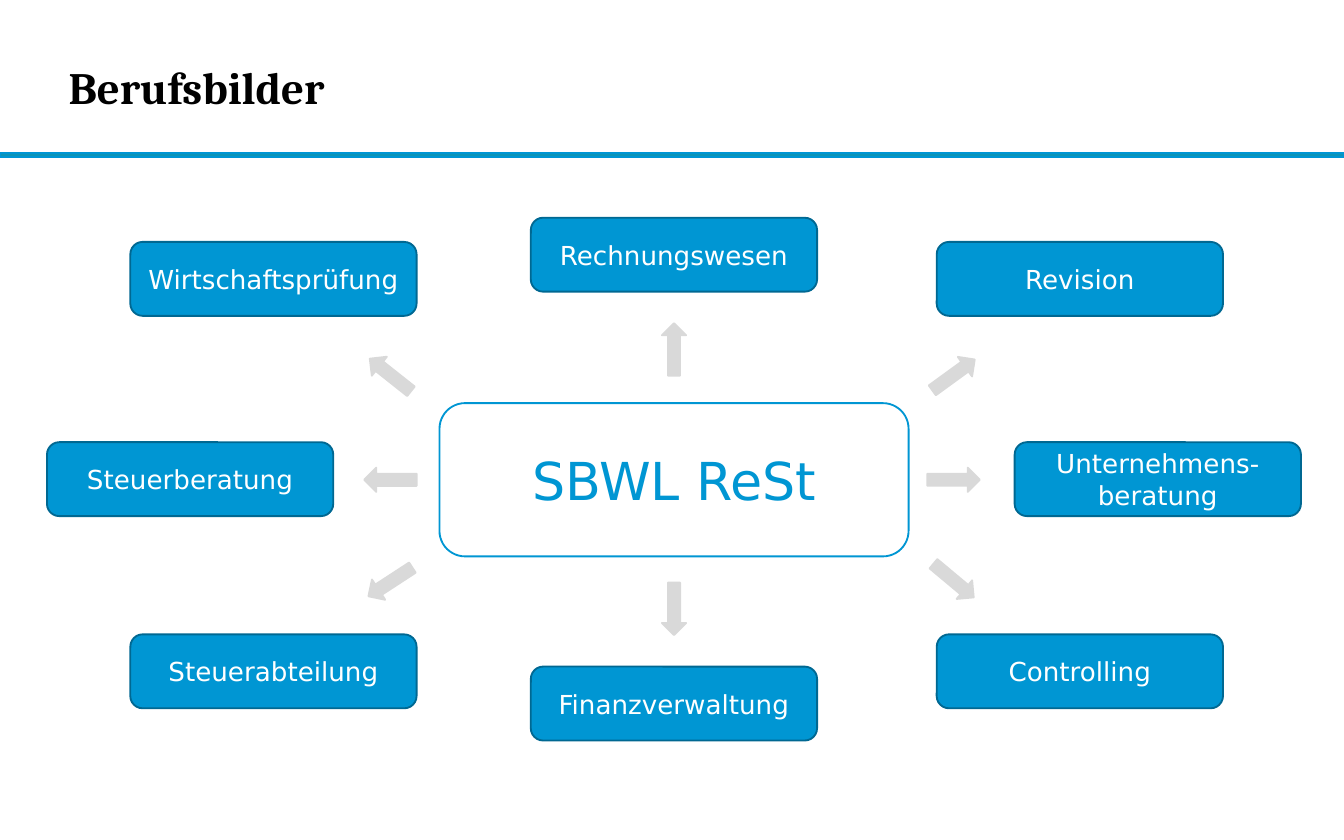
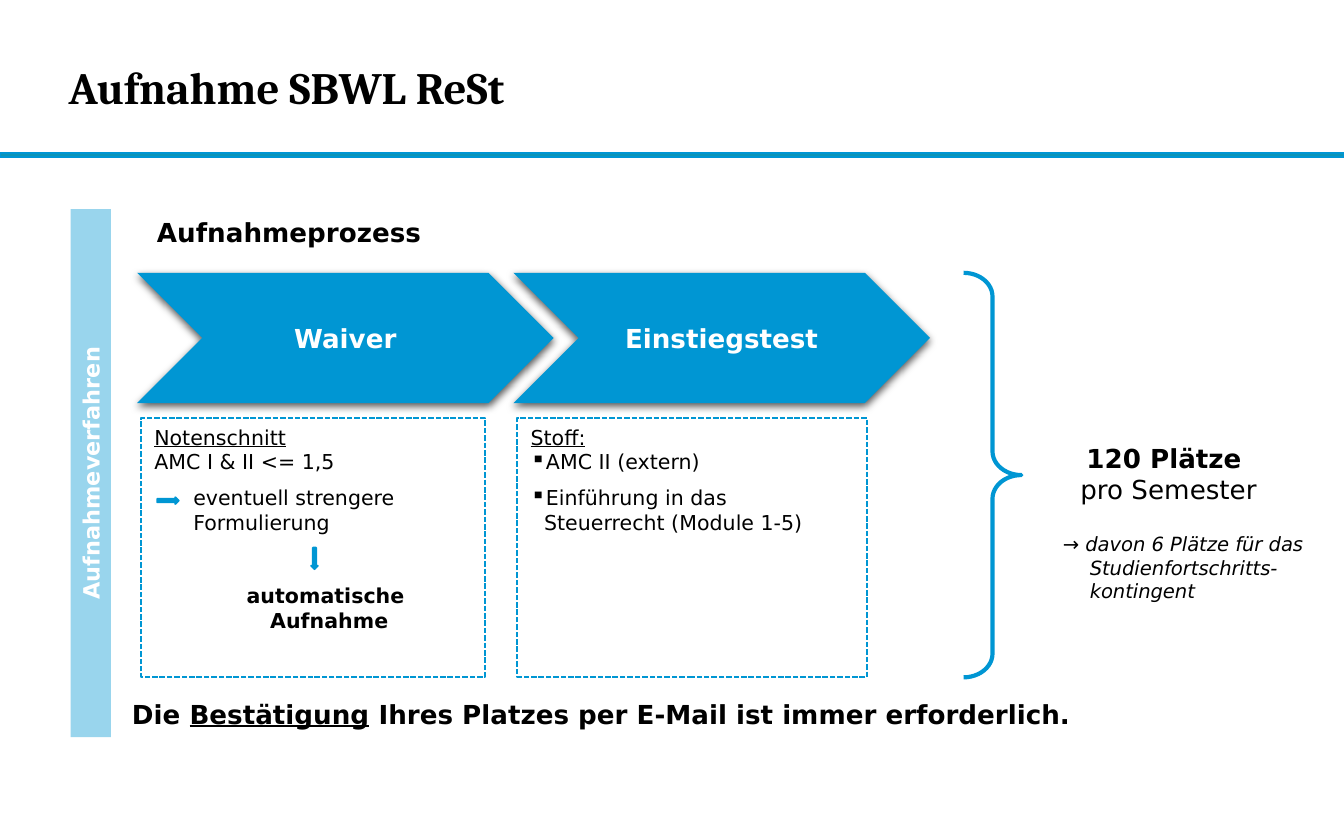
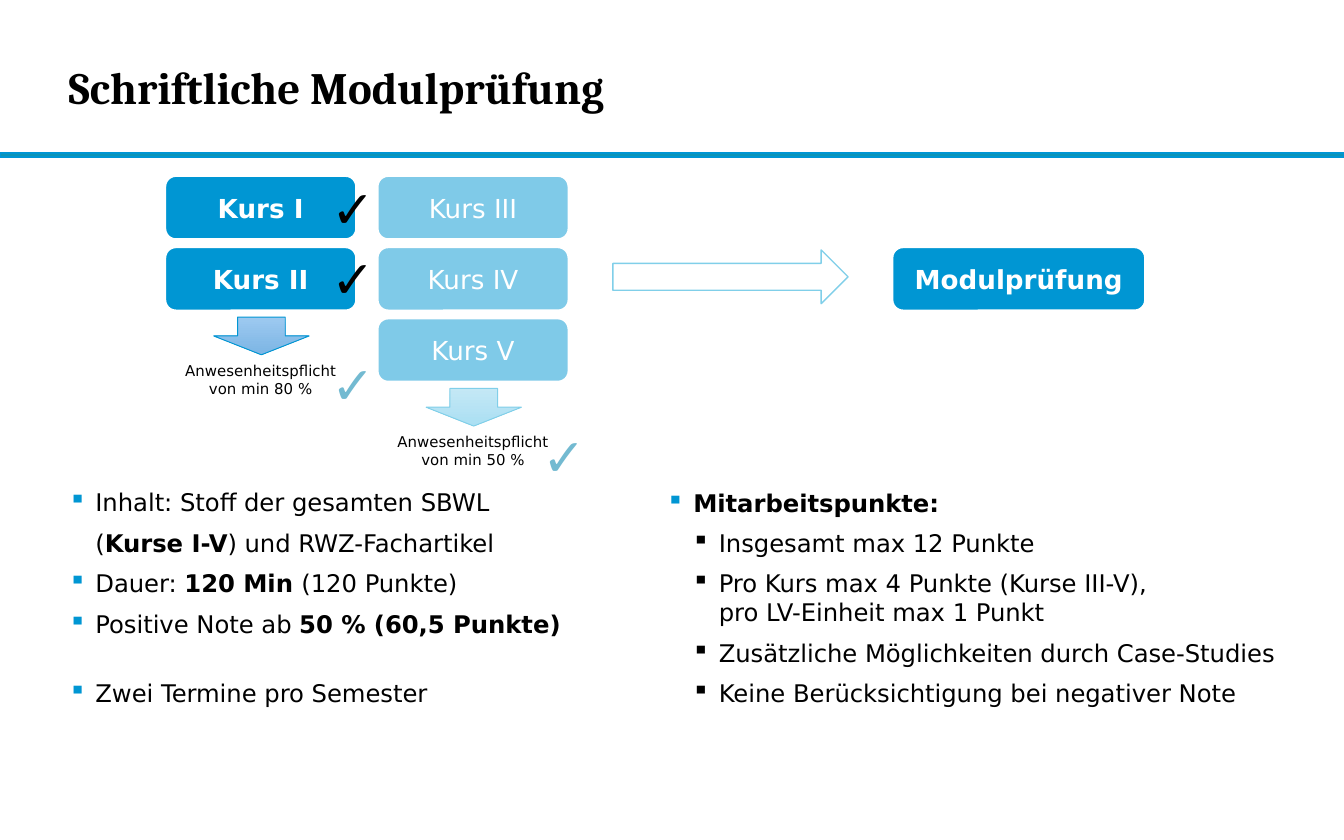
from lxml import etree
from pptx import Presentation
from pptx.dml.color import RGBColor
from pptx.enum.dml import MSO_LINE
from pptx.enum.shapes import MSO_SHAPE
from pptx.enum.text import MSO_ANCHOR, PP_ALIGN
from pptx.oxml.ns import qn
from pptx.util import Inches, Pt

RECT = MSO_SHAPE.RECTANGLE
ROUNDED = MSO_SHAPE.ROUNDED_RECTANGLE
CENTRAL = MSO_SHAPE.FLOWCHART_ALTERNATE_PROCESS
RIGHT_ARROW = MSO_SHAPE.RIGHT_ARROW
DOWN_ARROW = MSO_SHAPE.DOWN_ARROW
CHEVRON = MSO_SHAPE.CHEVRON
BRACE = MSO_SHAPE.RIGHT_BRACE
DASHED = MSO_LINE.SQUARE_DOT
LEFT, CENTER = PP_ALIGN.LEFT, PP_ALIGN.CENTER
TOP, MIDDLE = MSO_ANCHOR.TOP, MSO_ANCHOR.MIDDLE

BLUE = "0096D3"
DARK_BLUE = "006892"
BAND_BLUE = "0C94B7"
PALE_BLUE = "80CFE9"
CHECK_BLUE = "73BAD1"
GREY = "D9D9D9"
BLACK = "000000"
WHITE = "FFFFFF"
color = RGBColor.from_string


def place(slide, kind, at, fill=None, line=None, width=1, rotation=0, alpha=None):
    shape = slide.shapes.add_shape(kind, *[Inches(length) for length in at])
    shape.shadow.inherit = False
    shape.rotation = rotation
    if fill:
        shape.fill.solid()
        shape.fill.fore_color.rgb = color(fill)
    else:
        shape.fill.background()
    if alpha:
        tint = shape._element.spPr.xpath("a:solidFill/a:srgbClr")[0]
        etree.SubElement(tint, qn("a:alpha"), val=str(alpha * 1000))
    if line:
        shape.line.color.rgb = color(line)
        shape.line.width = Pt(width)
    else:
        shape.line.fill.background()
    return shape


def write(target, paragraphs, size, ink=BLACK, align=LEFT, anchor=TOP,
          font="DejaVu Sans", insets=(0.1, 0.05)):
    frame = target.text_frame
    frame.word_wrap = True
    frame.vertical_anchor = anchor
    frame.margin_left = frame.margin_right = Inches(insets[0])
    frame.margin_top = frame.margin_bottom = Inches(insets[1])
    for index, (runs, layout) in enumerate(paragraphs):
        paragraph = frame.paragraphs[0] if index == 0 else frame.add_paragraph()
        paragraph.alignment = layout.get("align", align)
        paragraph.level = layout.get("level", 0)
        paragraph.space_before = Pt(layout.get("before", 0))
        paragraph.space_after = Pt(layout.get("after", 0))
        properties = paragraph._p.get_or_add_pPr()
        properties.set("marL", str(Inches(layout.get("left", 0))))
        properties.set("indent", str(Inches(layout.get("first", 0))))
        if "bullet" in layout:
            tint = etree.SubElement(properties, qn("a:buClr"))
            etree.SubElement(tint, qn("a:srgbClr"), val=layout["bullet"])
            etree.SubElement(properties, qn("a:buChar"), char="▪")
        for text, style in runs:
            run = paragraph.add_run()
            run.text = text
            run.font.name = font
            run.font.size = Pt(size)
            run.font.color.rgb = color(ink)
            run.font.bold = "b" in style
            run.font.italic = "i" in style
            run.font.underline = "u" in style


presentation = Presentation()
presentation.slide_width = Inches(10)
presentation.slide_height = Inches(6.25)

slides = []
for title in ("Berufsbilder", "Aufnahme SBWL ReSt", "Schriftliche Modulprüfung"):
    slide = presentation.slides.add_slide(presentation.slide_layouts[6])
    place(slide, RECT, (0, 1.14, 10, 0.03), BAND_BLUE, BLUE)
    heading = slide.shapes.add_textbox(Inches(0.51), Inches(0.15), Inches(7.48), Inches(0.99))
    write(heading, [([(title, "b")], {})], 24, anchor=MIDDLE, font="Cambria", insets=(0, 0))
    slides.append(slide)
careers, admission, exam = slides

for career, left, top in (
    ("Wirtschaftsprüfung", 0.97, 1.8),
    ("Rechnungswesen", 3.95, 1.62),
    ("Revision", 6.97, 1.8),
    ("Steuerberatung", 0.35, 3.29),
    ("Unternehmens-beratung", 7.55, 3.29),
    ("Steuerabteilung", 0.97, 4.72),
    ("Finanzverwaltung", 3.95, 4.96),
    ("Controlling", 6.97, 4.72),
):
    field = place(careers, ROUNDED, (left, top, 2.13, 0.55), BLUE, DARK_BLUE)
    write(field, [([(career, "")], {})], 14, WHITE, CENTER, MIDDLE)

programme = place(careers, CENTRAL, (3.27, 3, 3.49, 1.14), WHITE, BLUE)
write(programme, [([("SBWL ReSt", "")], {})], 28, BLUE, CENTER, MIDDLE)

for left, top, angle in (
    (6.9, 3.48, 0), (6.9, 4.23, 39.9), (4.82, 4.44, 90), (2.71, 4.24, 146.9),
    (2.71, 3.48, 180), (2.71, 2.7, 218.4), (4.82, 2.51, 270), (6.9, 2.7, 324),
):
    place(careers, RIGHT_ARROW, (left, top, 0.39, 0.18), GREY, GREY, rotation=angle)

procedure = place(admission, RECT, (-1.29, 3.37, 3.93, 0.3), BLUE, rotation=270, alpha=40)
write(procedure, [([("Aufnahmeverfahren", "b")], {})], 12, WHITE, CENTER, MIDDLE)

waiver_rules = [
    ([("Notenschnitt", "u")], {}),
    ([("AMC I & II <= 1,5", "")], {}),
    ([("eventuell strengere Formulierung", "")], {"left": 0.29, "before": 6}),
    ([("automatische ", "b")], {"align": CENTER, "left": 0.24, "before": 26}),
    ([("Aufnahme", "b")], {"align": CENTER, "left": 0.24}),
]
test_topics = [
    ([("Stoff:", "u")], {}),
    ([("AMC II (extern)", "")], {"left": 0.1, "first": -0.1, "bullet": BLACK}),
    ([("Einführung in das Steuerrecht (Module 1-5)", "")],
     {"left": 0.1, "first": -0.1, "before": 6, "bullet": BLACK}),
]
for step, step_left, details, details_left, details_width in (
    ("Waiver", 1.02, waiver_rules, 1.05, 2.56),
    ("Einstiegstest", 3.82, test_topics, 3.85, 2.6),
):
    stage = place(admission, CHEVRON, (step_left, 2.03, 3.1, 0.97), BLUE)
    write(stage, [([(step, "b")], {})], 14, WHITE, CENTER, MIDDLE, insets=(0.02, 0.02))
    effects = stage._element.spPr.find(qn("a:effectLst"))
    shade = etree.SubElement(effects, qn("a:outerShdw"), blurRad=str(Pt(4.5)),
                             dist=str(Pt(1.5)), dir="5400000", rotWithShape="0")
    shade_tint = etree.SubElement(shade, qn("a:srgbClr"), val=BLACK)
    etree.SubElement(shade_tint, qn("a:alpha"), val="63000")
    requirements = place(admission, RECT, (details_left, 3.11, details_width, 1.93), WHITE, BLUE)
    requirements.line.dash_style = DASHED
    write(requirements, details, 11)

for left, top, angle in ((1.17, 3.7, 0), (2.26, 4.13, 90)):
    place(admission, RIGHT_ARROW, (left, top, 0.16, 0.05), BLUE, BLUE, rotation=angle)

summary_brace = place(admission, BRACE, (7.17, 2.03, 0.43, 3.01), line=BLUE, width=2.25)
summary_brace.adjustments[0] = 0.41
summary_brace.adjustments[1] = 0.5

for at, paragraphs, size, align in (
    ((1.07, 1.56, 3.97, 0.34), [([("Aufnahmeprozess", "b")], {})], 14, LEFT),
    ((7.72, 3.24, 1.95, 0.57),
     [([("120 Plätze ", "b")], {}), ([("pro Semester", "")], {})], 14, CENTER),
    ((7.81, 3.91, 2.08, 0.63),
     [([("→", ""), (" davon 6 Plätze für das Studienfortschritts-kontingent", "i")],
       {"left": 0.2, "first": -0.2})], 10.5, LEFT),
    ((0.75, 5.15, 7.45, 0.34),
     [([("Die ", "b"), ("Bestätigung", "bu"),
        (" Ihres Platzes per E-Mail ist immer erforderlich.", "b")], {})], 14, CENTER),
):
    note = admission.shapes.add_textbox(*[Inches(length) for length in at])
    write(note, paragraphs, size, align=align)

for course, left, row, style, alpha in (
    ("Kurs I", 1.23, 0, "b", None),
    ("Kurs II", 1.23, 1, "b", None),
    ("Kurs III", 2.81, 0, "", 50),
    ("Kurs IV", 2.81, 1, "", 50),
    ("Kurs V", 2.81, 2, "", 50),
):
    course_box = place(exam, ROUNDED, (left, 1.31 + 0.53 * row, 1.42, 0.47),
                       BLUE, WHITE, alpha=alpha)
    write(course_box, [([(course, style)], {})], 14, WHITE, CENTER, MIDDLE)

place(exam, RIGHT_ARROW, (4.56, 1.86, 1.75, 0.4), line=PALE_BLUE, width=0.75)
module_exam = place(exam, ROUNDED, (6.64, 1.84, 1.88, 0.47), BLUE, WHITE)
write(module_exam, [([("Modulprüfung", "b")], {})], 14, WHITE, CENTER, MIDDLE)

for left, top, share, outline, shades in (
    (1.23, 2.36, "80 %", BLUE, ("9DC9F0", "7CB5E4")),
    (2.81, 2.89, "50 %", PALE_BLUE, ("C4E8F5", "AADFF3")),
):
    duty_arrow = place(exam, DOWN_ARROW, (left + 0.36, top, 0.71, 0.28), WHITE, outline, 0.5)
    duty_arrow.fill.gradient()
    duty_arrow.fill.gradient_angle = 270
    for stop, shade in zip(duty_arrow.fill.gradient_stops, shades):
        stop.color.rgb = color(shade)
    attendance = exam.shapes.add_textbox(
        Inches(left), Inches(top + 0.28), Inches(1.42), Inches(0.37))
    write(attendance, [([(f"Anwesenheitspflicht von min {share}", "")], {})], 8, align=CENTER)

for left, top, ink in (
    (2.37, 1.26, BLACK), (2.37, 1.78, BLACK), (2.37, 2.57, CHECK_BLUE), (3.94, 3.11, CHECK_BLUE),
):
    check = exam.shapes.add_textbox(Inches(left), Inches(top), Inches(0.36), Inches(0.57))
    write(check, [([("✓", "")], {})], 28, ink)

hanging = {"left": 0.2, "first": -0.2, "after": 6}
main_point = {**hanging, "bullet": BLUE}
sub_point = {"left": 0.39, "first": -0.2, "after": 6, "level": 2, "bullet": BLACK}
exam_facts = [
    ([("Inhalt: Stoff der gesamten SBWL", "")], main_point),
    ([("(", ""), ("Kurse I-V", "b"), (") und RWZ-Fachartikel", "")], {**hanging, "first": 0}),
    ([("Dauer: ", ""), ("120 Min ", "b"), ("(120 Punkte)", "")], main_point),
    ([("Positive Note ab ", ""), ("50 % (60,5 Punkte)", "b")], main_point),
    ([("Zwei Termine pro Semester", "")], {**main_point, "before": 15.5}),
]
participation = [
    ([("Mitarbeitspunkte:", "b")], main_point),
    ([("Insgesamt max 12 Punkte", "")], sub_point),
    ([("Pro Kurs max 4 Punkte (Kurse III-V),", "")], {**sub_point, "after": 0}),
    ([("pro LV-Einheit max 1 Punkt", "")], {"left": 0.39, "after": 6, "level": 2}),
    ([("Zusätzliche Möglichkeiten durch Case-Studies", "")], sub_point),
    ([("Keine Berücksichtigung bei negativer Note", "")], sub_point),
]
for left, width, height, points, side_inset in (
    (0.51, 4.49, 2.36, exam_facts, 0),
    (4.86, 4.88, 1.75, participation, 0.1),
):
    column = exam.shapes.add_textbox(Inches(left), Inches(3.58), Inches(width), Inches(height))
    write(column, points, 13, insets=(side_inset, 0.05))

presentation.save("out.pptx")
